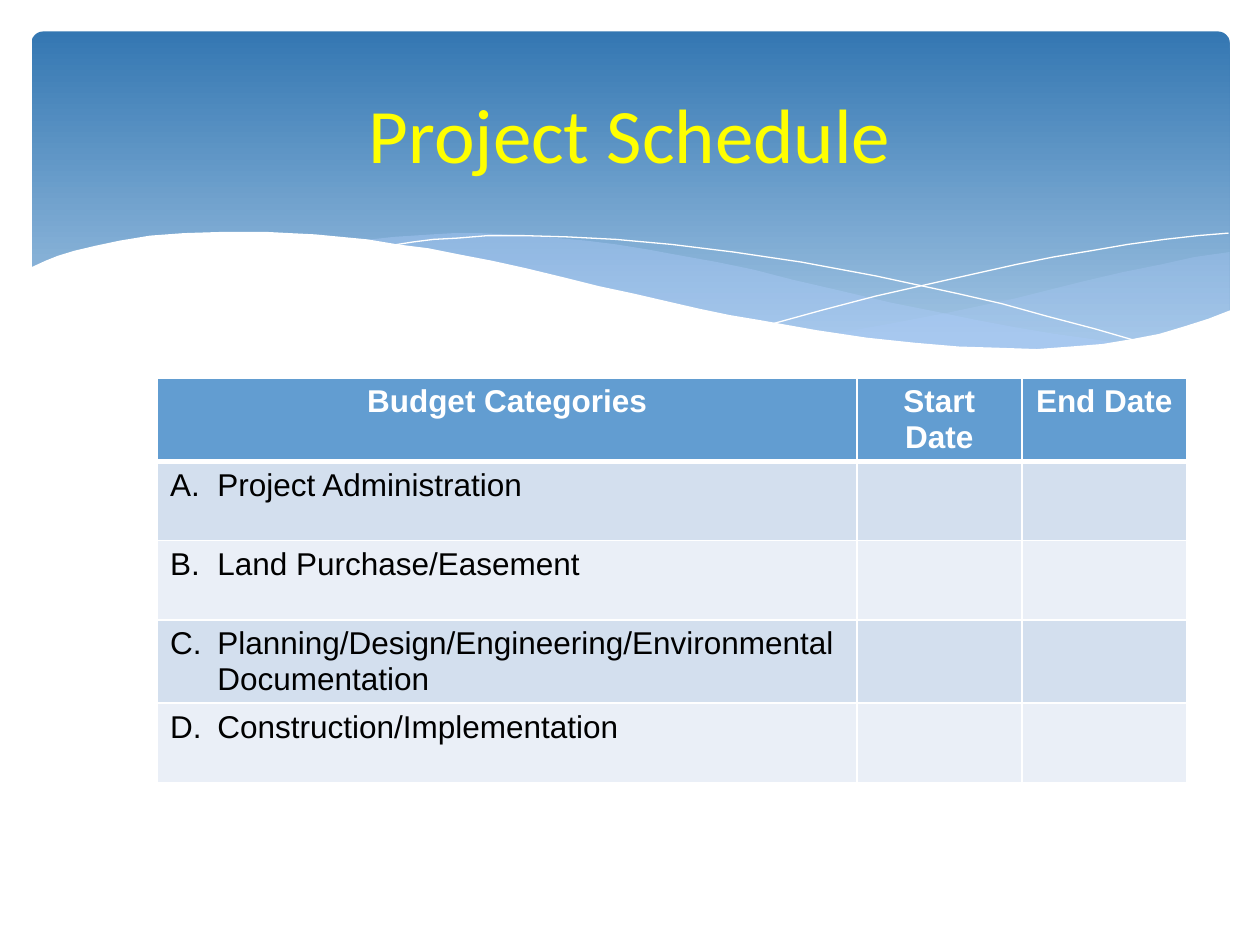
from lxml import etree
from pptx import Presentation
from pptx.dml.color import RGBColor
from pptx.enum.shapes import MSO_SHAPE
from pptx.enum.text import MSO_ANCHOR, PP_ALIGN
from pptx.oxml.ns import qn
from pptx.util import Pt

CENTER = PP_ALIGN.CENTER
MIDDLE = MSO_ANCHOR.MIDDLE
ROUNDED = MSO_SHAPE.ROUNDED_RECTANGLE
COLORS = {
    "white": "FFFFFF", "black": "000000", "title": "FFFF00",
    "banner_top": "3477B2", "banner_bottom": "A1C4E3", "wave": "ACCBF9",
    "header": "629DD1", "band_dark": "D3DFEE", "band_light": "EAEFF7",
}
TITLE = "Project Schedule"
HEADERS = ["Budget Categories", "Start Date", "End Date"]
CATEGORIES = [
    "Project Administration",
    "Land Purchase/Easement",
    "Planning/Design/Engineering/Environmental Documentation",
    "Construction/Implementation",
]
COLUMN_WIDTHS = [399.6, 94.3, 94.3]
HEADER_HEIGHT, ROW_HEIGHT = 27.4, 45.4

GRID = 0.72
RIGHT_WAVE = [
    (976, 200), (948, 204), (921, 210), (891, 216), (861, 223), (805, 237),
    (753, 248), (706, 257), (661, 265), (691, 269), (719, 272), (745, 275),
    (769, 277), (803, 278), (835, 277), (863, 275), (889, 272), (913, 267),
    (935, 262), (949, 257), (963, 252), (976, 247),
]
MIDDLE_WAVE = [
    (893, 273), (866, 269), (837, 265), (807, 260), (775, 254), (741, 247),
    (706, 240), (668, 231), (629, 222), (598, 214), (569, 208), (541, 203),
    (514, 198), (489, 194), (465, 191), (442, 189), (420, 187), (399, 186),
    (380, 185), (361, 185), (344, 186), (313, 188), (286, 191), (323, 196),
    (362, 203), (404, 211), (449, 222), (491, 232), (530, 240), (566, 248),
    (601, 255), (634, 261), (665, 266), (695, 270), (722, 274), (748, 276),
    (773, 277), (796, 278), (828, 278), (857, 277), (876, 275),
]
FALLING_LINE = [
    (309, 195), (328, 192), (344, 190), (363, 189), (387, 187), (416, 187),
    (450, 188), (489, 190), (533, 194), (582, 200), (636, 208), (695, 219),
    (760, 233), (795, 241), (831, 251), (869, 261), (907, 272),
]
RISING_LINE = [
    (613, 257), (653, 246), (695, 235), (748, 223), (806, 210), (836, 204),
    (866, 199), (895, 194), (924, 190), (951, 187), (975, 185),
]
WHITE_WAVE = [
    (977, 246), (959, 253), (940, 259), (920, 265), (899, 269), (875, 273),
    (850, 275), (823, 277), (793, 276), (761, 275), (726, 272), (688, 268),
    (648, 262), (603, 254), (579, 250), (555, 245), (529, 239), (503, 233),
    (475, 227), (447, 220), (418, 213), (391, 207), (365, 202), (340, 197),
    (316, 194), (292, 190), (271, 188), (250, 186), (230, 185), (211, 184),
    (177, 184), (146, 185), (119, 187), (95, 191), (76, 195), (59, 199),
    (46, 203), (36, 207), (23, 213), (23, 329), (977, 329),
]
WAVES = [
    (RIGHT_WAVE, "wave", 29), (MIDDLE_WAVE, "wave", 40),
    (FALLING_LINE, None, None), (RISING_LINE, None, None),
    (WHITE_WAVE, "white", 100),
]


def color(name):
    return RGBColor.from_string(COLORS[name])


def add_banner(page):
    banner = page.shapes.add_shape(ROUNDED, Pt(18), Pt(18), Pt(684.7), Pt(194.4))
    banner.adjustments[0] = 0.034
    banner.shadow.inherit = False
    banner.line.fill.background()
    banner.fill.gradient()
    banner.fill.gradient_angle = 270
    stops = banner.fill.gradient_stops
    for stop, position, name in zip(stops, (0, 0.9), ("banner_top", "banner_bottom")):
        stop.position = position
        stop.color.rgb = color(name)


def add_wave(page, points, fill_name, opacity):
    builder = page.shapes.build_freeform(*points[0], scale=Pt(GRID))
    builder.add_line_segments(points[1:], close=fill_name is not None)
    wave = builder.convert_to_shape()
    wave.shadow.inherit = False
    if fill_name is None:
        wave.fill.background()
        wave.line.color.rgb = color("white")
        wave.line.width = Pt(0)
        return
    wave.line.fill.background()
    wave.fill.solid()
    wave.fill.fore_color.rgb = color(fill_name)
    if opacity < 100:
        tint = wave.element.spPr.find(qn("a:solidFill"))[0]
        etree.SubElement(tint, qn("a:alpha"), val=str(opacity * 1000))


def add_text(para, text, size, font, color_name, bold=False):
    span = para.add_run()
    span.text = text
    span.font.size = Pt(size)
    span.font.name = font
    span.font.bold = bold
    span.font.color.rgb = color(color_name)


def number_paragraph(para, number):
    properties = para._p.get_or_add_pPr()
    properties.set("marL", str(Pt(27)))
    properties.set("indent", str(-Pt(27)))
    etree.SubElement(properties, qn("a:buFont"), typeface="+mj-lt")
    etree.SubElement(properties, qn("a:buAutoNum"), type="alphaUcPeriod",
                     startAt=str(number))


def style_cell(cell, fill_name, top, bottom):
    properties = cell._tc.get_or_add_tcPr()
    for side, width in (("L", 1), ("R", 1), ("T", top), ("B", bottom)):
        border = etree.SubElement(properties, qn(f"a:ln{side}"), w=str(Pt(width)))
        fill = etree.SubElement(border, qn("a:solidFill"))
        etree.SubElement(fill, qn("a:srgbClr"), val=COLORS["white"])
    cell.fill.solid()
    cell.fill.fore_color.rgb = color(fill_name)


def add_schedule(page):
    rows = len(CATEGORIES) + 1
    height = HEADER_HEIGHT + ROW_HEIGHT * len(CATEGORIES)
    frame = page.shapes.add_table(rows, len(HEADERS), Pt(90), Pt(216),
                                  Pt(sum(COLUMN_WIDTHS)), Pt(height))
    table = frame.table
    for column, width in zip(table.columns, COLUMN_WIDTHS):
        column.width = Pt(width)
    for index, row in enumerate(table.rows):
        row.height = Pt(ROW_HEIGHT if index else HEADER_HEIGHT)
        band = ("band_dark" if index % 2 else "band_light") if index else "header"
        for cell in row.cells:
            style_cell(cell, band, 3 if index == 1 else 1, 1 if index else 3)
    for column, text in enumerate(HEADERS):
        para = table.cell(0, column).text_frame.paragraphs[0]
        para.alignment = CENTER
        add_text(para, text, 18, "Arial", "white", bold=True)
    for number, text in enumerate(CATEGORIES, 1):
        para = table.cell(number, 0).text_frame.paragraphs[0]
        number_paragraph(para, number)
        add_text(para, text, 18, "Arial", "black")
    return frame


def main():
    deck = Presentation()
    deck.slide_width, deck.slide_height = Pt(720), Pt(540)
    page = deck.slides.add_slide(deck.slide_layouts[5])
    add_banner(page)
    for points, fill_name, opacity in WAVES:
        add_wave(page, points, fill_name, opacity)
    schedule = add_schedule(page)

    title = page.shapes.title
    title.left, title.top, title.width, title.height = Pt(36), Pt(26.6), Pt(648), Pt(98.6)
    title.text_frame.vertical_anchor = MIDDLE
    para = title.text_frame.paragraphs[0]
    para.alignment = CENTER
    add_text(para, TITLE, 44, "Calibri", "title")
    schedule.element.addprevious(title.element)
    deck.save("out.pptx")


if __name__ == "__main__":
    main()
